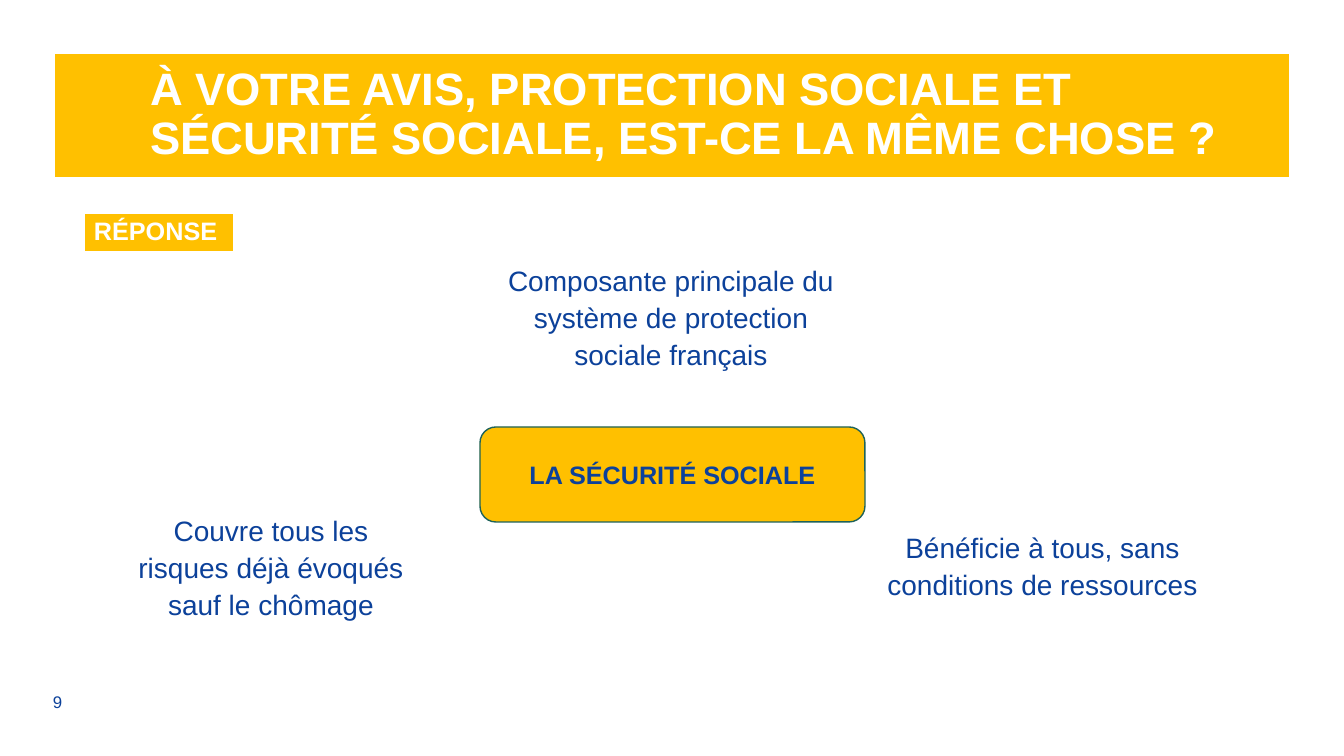
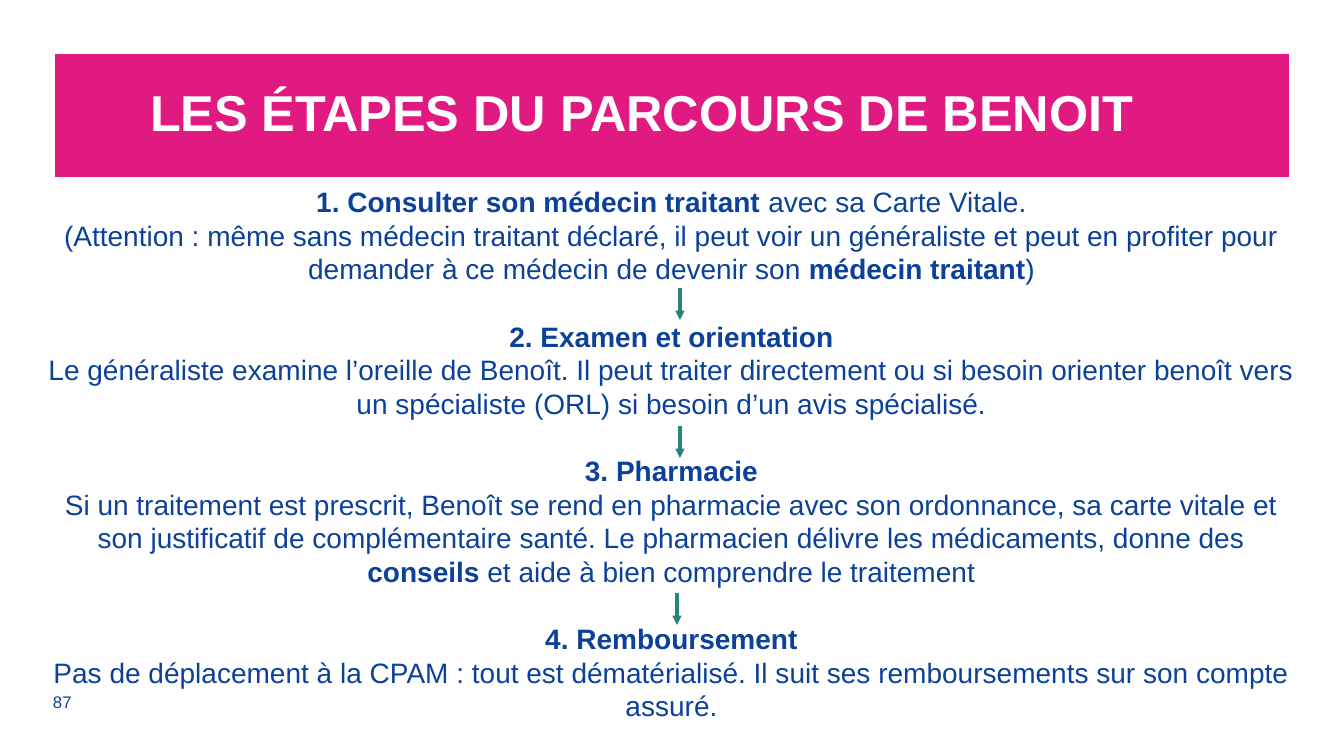
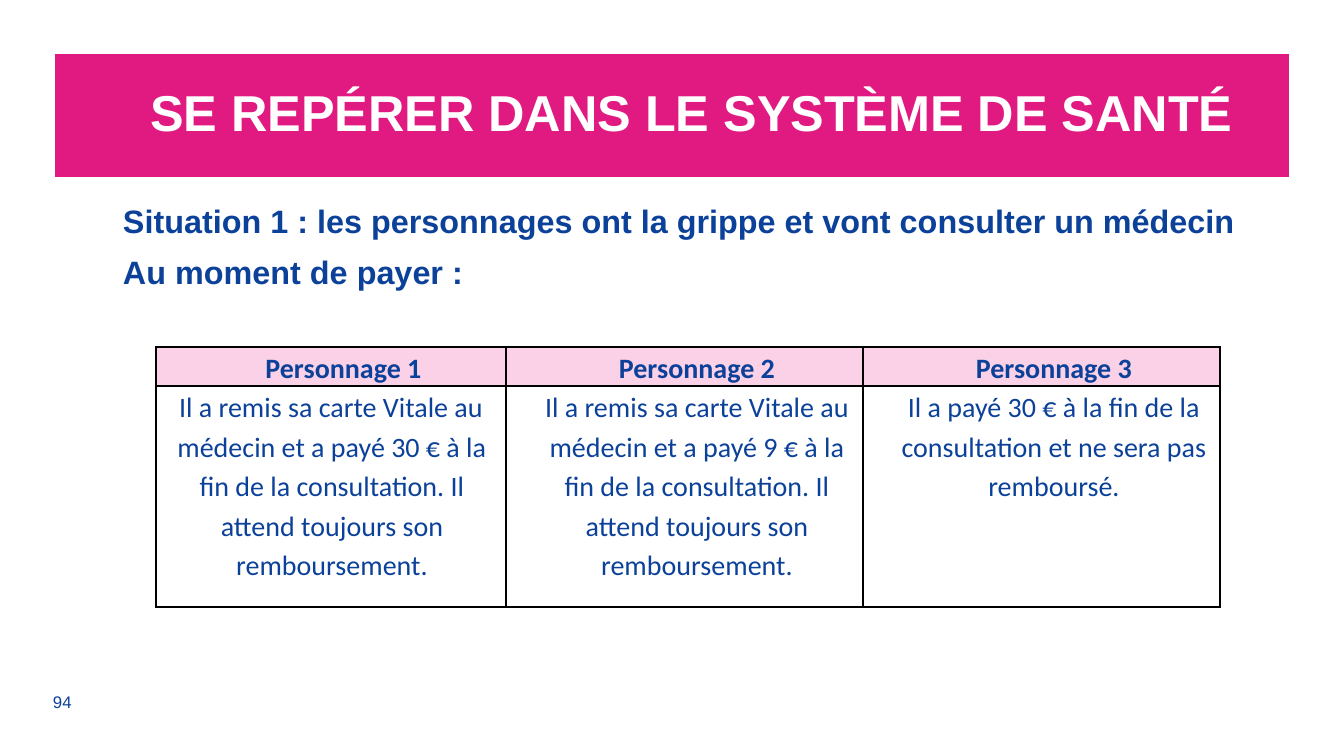
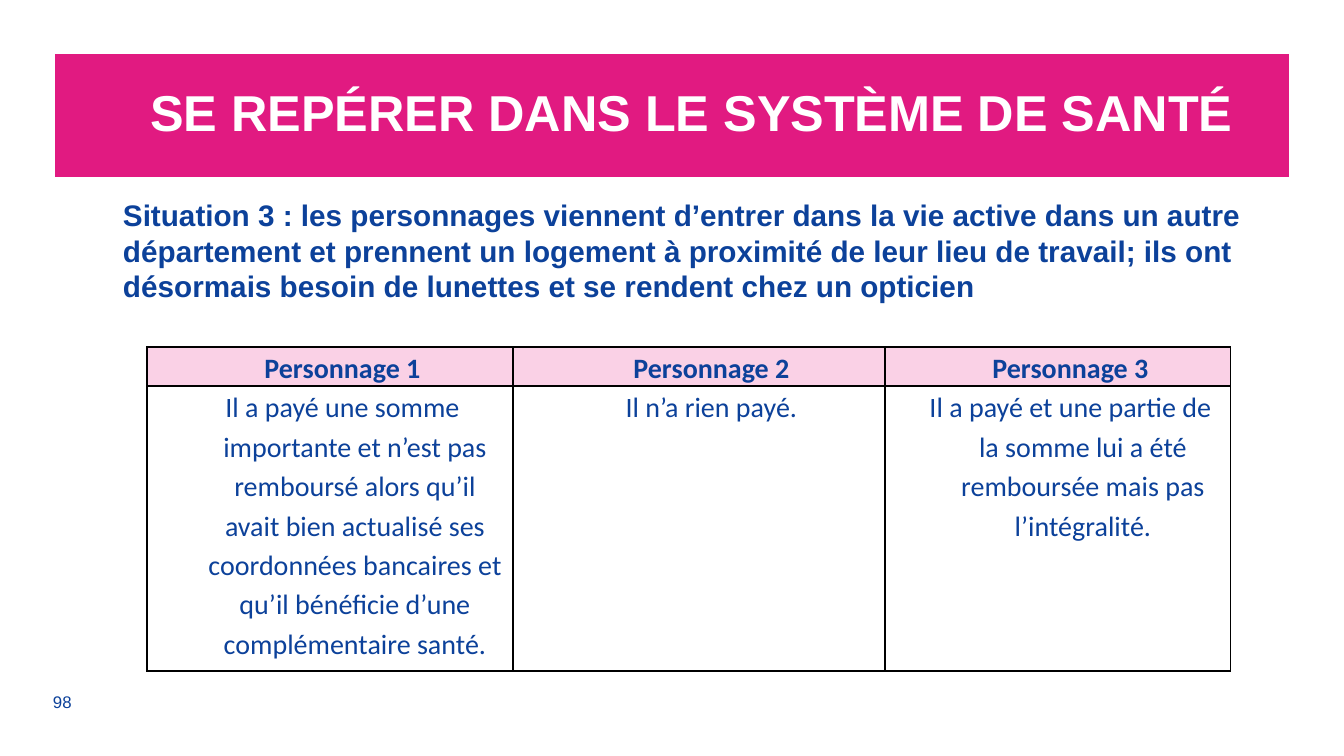
from lxml.etree import SubElement
from pptx import Presentation
from pptx.dml.color import RGBColor
from pptx.enum.shapes import MSO_CONNECTOR, MSO_SHAPE
from pptx.enum.text import MSO_ANCHOR, PP_ALIGN
from pptx.oxml import parse_xml
from pptx.oxml.ns import nsdecls, qn
from pptx.util import Pt

EMU_PER_INCH, PX_PER_INCH = 914400, 100.8

BLUE = RGBColor(0x0C, 0x41, 0x9A)
YELLOW = RGBColor(0xFF, 0xC0, 0x00)
PINK = RGBColor(0xE1, 0x1A, 0x81)
PALE_PINK = RGBColor(0xFA, 0xD1, 0xE6)
GREEN = RGBColor(0x29, 0x84, 0x78)
DARK_GREEN = RGBColor(0x1E, 0x62, 0x59)
WHITE = RGBColor(0xFF, 0xFF, 0xFF)
BLACK = RGBColor(0x00, 0x00, 0x00)

BLANK_LAYOUT = 6
MARGINS = (10, 5, 10, 5)


def px(*lengths):
    """Turn pixels into EMU."""
    return [round(n * EMU_PER_INCH / PX_PER_INCH) for n in lengths]


class Deck:
    def __init__(self):
        self.prs = Presentation()
        self.prs.slide_width, self.prs.slide_height = px(1344, 756)
        self.slide = None

    def new_slide(self, number, title, color=PINK, title_size=36):
        """Start a slide with its title band and page number."""
        layout = self.prs.slide_layouts[BLANK_LAYOUT]
        self.slide = self.prs.slides.add_slide(layout)
        band = self.box(MSO_SHAPE.RECTANGLE, (55, 54, 1234, 123), color)
        self.set_text(band.text_frame, [title], title_size, WHITE, bold=True,
                      spacing=0.9, margins=(95, 8, 8, 8), anchor=MSO_ANCHOR.MIDDLE)
        self.text((43, 686, 80, 31), [str(number)], 12, anchor=MSO_ANCHOR.MIDDLE)

    def set_text(self, frame, paragraphs, size, color=BLUE, bold=False, font="Arial",
                 align=PP_ALIGN.LEFT, spacing=1.0, before=0, after=0, indent=(0, 0),
                 margins=MARGINS, anchor=MSO_ANCHOR.TOP):
        """Fill a text frame; words between asterisks are bold."""
        frame.word_wrap = True
        frame.vertical_anchor = anchor
        (frame.margin_left, frame.margin_top,
         frame.margin_right, frame.margin_bottom) = px(*margins)
        for i, content in enumerate(paragraphs):
            paragraph = frame.paragraphs[0] if i == 0 else frame.add_paragraph()
            paragraph.alignment = align
            paragraph.line_spacing = spacing
            paragraph.space_before, paragraph.space_after = Pt(before), Pt(after)
            left, first = px(*indent)
            properties = paragraph._p.get_or_add_pPr()
            properties.set("marL", str(left))
            properties.set("indent", str(first))
            for j, piece in enumerate(content.split("*")):
                if piece:
                    run = paragraph.add_run()
                    run.text = piece
                    run.font.name, run.font.size = font, Pt(size)
                    run.font.bold = bold or j % 2 == 1
                    run.font.color.rgb = color
        return frame.paragraphs

    def text(self, area, paragraphs, size, **style):
        textbox = self.slide.shapes.add_textbox(*px(*area))
        return self.set_text(textbox.text_frame, paragraphs, size, **style)

    def box(self, kind, area, fill, line=None):
        shape = self.slide.shapes.add_shape(kind, *px(*area))
        shape.shadow.inherit = False
        shape.fill.solid()
        shape.fill.fore_color.rgb = fill
        if line is None:
            shape.line.fill.background()
        else:
            shape.line.color.rgb, shape.line.width = line, Pt(1)
        return shape

    def idea(self, area, content):
        """Centred statement around the central box."""
        self.text(area, [content], 20, align=PP_ALIGN.CENTER, spacing=1.1,
                  before=6, indent=(25, 0))

    def arrow_down(self, x, top, bottom):
        arrow = self.slide.shapes.add_connector(
            MSO_CONNECTOR.STRAIGHT, *px(x, top, x, bottom))
        arrow.line.color.rgb, arrow.line.width = GREEN, Pt(2.25)
        SubElement(arrow.line._get_or_add_ln(), qn("a:tailEnd"), type="triangle")
        SubElement(arrow._element.spPr, qn("a:effectLst"))

    def table(self, left, top, widths, heights):
        """Add a table without banding and return it."""
        area = px(left, top, sum(widths), sum(heights))
        grid = self.slide.shapes.add_table(len(heights), len(widths), *area).table
        grid.first_row = grid.horz_banding = False
        for column, width in zip(grid.columns, px(*widths)):
            column.width = width
        for row, height in zip(grid.rows, px(*heights)):
            row.height = height
        return grid

    def cell(self, cell, content, size, fill=None, border=BLACK, bottom=1, **style):
        self.set_text(cell.text_frame, [content], size, **style)
        # Cell margins and borders belong to the cell, not to its text frame
        (cell.margin_left, cell.margin_top, cell.margin_right,
         cell.margin_bottom) = px(*style.get("margins", MARGINS))
        if fill is None:
            cell.fill.background()
        else:
            cell.fill.solid()
            cell.fill.fore_color.rgb = fill
        properties = cell._tc.get_or_add_tcPr()
        for i, side in enumerate("LRTB"):
            width = Pt(bottom if side == "B" else 1)
            properties.insert(i, parse_xml(
                f'<a:ln{side} {nsdecls("a")} w="{width}"><a:solidFill>'
                f'<a:srgbClr val="{border}"/></a:solidFill></a:ln{side}>'))

    def characters(self, left, widths, height, stories, indents):
        """Table with one column for each character."""
        grid = self.table(left, 347, widths, (39, height))
        style = dict(font="Calibri", align=PP_ALIGN.CENTER, spacing=1.15,
                     after=6, margins=(7, 0, 7, 0))
        for i, (story, indent) in enumerate(zip(stories, indents)):
            self.cell(grid.cell(0, i), f"Personnage {i + 1}", 20, PALE_PINK,
                      bold=True, indent=(25, 0), **style)
            self.cell(grid.cell(1, i), story, 20, indent=indent, **style)


def social_security(deck):
    deck.new_slide(9, "À VOTRE AVIS, PROTECTION SOCIALE ET SÉCURITÉ SOCIALE, "
                      "EST-CE LA MÊME CHOSE ?", YELLOW, 32.4)
    # Answer label
    answer = deck.table(84, 213, (150,), (40,))
    deck.cell(answer.cell(0, 0), "RÉPONSE", 18, YELLOW, WHITE, 3,
              color=WHITE, bold=True)
    # Central box and its three statements
    center = deck.box(MSO_SHAPE.ROUNDED_RECTANGLE, (480, 427, 385, 95),
                      YELLOW, DARK_GREEN)
    deck.set_text(center.text_frame, ["LA SÉCURITÉ SOCIALE"], 18, bold=True,
                  align=PP_ALIGN.CENTER, anchor=MSO_ANCHOR.MIDDLE)
    deck.idea((466, 255, 385, 95),
              "Composante principale du système de protection sociale français")
    deck.idea((850, 522, 360, 95), "Bénéficie à tous, sans conditions de ressources")
    deck.idea((95, 505, 327, 155),
              "Couvre tous les risques déjà évoqués sauf le chômage")


def care_steps(deck):
    deck.new_slide(87, "LES ÉTAPES DU PARCOURS DE BENOIT")
    steps = [
        "*1. Consulter son médecin traitant *avec sa Carte Vitale.",
        "(Attention : même sans médecin traitant déclaré, il peut voir un généraliste "
        "et peut en profiter pour demander à ce médecin de devenir son "
        "*médecin traitant*)",
        "*2. Examen et orientation*",
        "Le généraliste examine l’oreille de Benoît. Il peut traiter directement ou si "
        "besoin orienter benoît vers un spécialiste (ORL) si besoin d’un avis "
        "spécialisé.",
        "*3. Pharmacie*",
        "Si un traitement est prescrit, Benoît se rend en pharmacie avec son "
        "ordonnance, sa carte vitale et son justificatif de complémentaire santé. "
        "Le pharmacien délivre les médicaments, donne des *conseils* et aide à bien "
        "comprendre le traitement",
        "*4. Remboursement*",
        "Pas de déplacement à la CPAM : tout est dématérialisé. Il suit ses "
        "remboursements sur son compte assuré.",
    ]
    paragraphs = deck.text((30, 177, 1283, 553), steps, 20,
                           align=PP_ALIGN.CENTER, anchor=MSO_ANCHOR.MIDDLE)
    # Room for an arrow above each heading but the first
    for heading in paragraphs[2::2]:
        heading.space_before = Pt(24)
    for x, top in ((680, 288), (680, 426), (677, 593)):
        deck.arrow_down(x, top, top + 32)


def situation(deck, number, lines, size, spacing, **table):
    deck.new_slide(number, "SE REPÉRER DANS LE SYSTÈME DE SANTÉ")
    deck.text((113, 192, 1151, 140), lines, size, bold=True, spacing=spacing, before=6)
    deck.characters(**table)


def main():
    deck = Deck()
    social_security(deck)
    care_steps(deck)

    # Flu
    waiting = [f"Il a remis sa carte Vitale au médecin et a payé {price} € à la fin de "
               "la consultation. Il attend toujours son remboursement."
               for price in (30, 9)]
    situation(
        deck, 94,
        ["Situation 1 : les personnages ont la grippe et vont consulter un médecin",
         "Au moment de payer :"], 23.1, 1.1,
        left=156, widths=(350, 357, 357), height=221,
        stories=(*waiting,
                 "Il a payé 30 € à la fin de la consultation et ne sera pas remboursé."),
        indents=((2, -25), (25, 0), (25, 0)))

    # Glasses
    situation(
        deck, 98,
        ["Situation 3 : les personnages viennent d’entrer dans la vie active dans un "
         "autre département et prennent un logement à proximité de leur lieu de "
         "travail; ils ont désormais besoin de lunettes et se rendent chez un "
         "opticien"], 21.2, 1.0,
        left=147, widths=(366, 372, 346), height=285,
        stories=("Il a payé une somme importante et n’est pas remboursé alors qu’il "
                 "avait bien actualisé ses coordonnées bancaires et qu’il bénéficie "
                 "d’une complémentaire santé.",
                 "Il n’a rien payé.",
                 "Il a payé et une partie de la somme lui a été remboursée mais pas "
                 "l’intégralité."),
        indents=((50, -25),) * 3)

    deck.prs.save("out.pptx")


if __name__ == "__main__":
    main()
